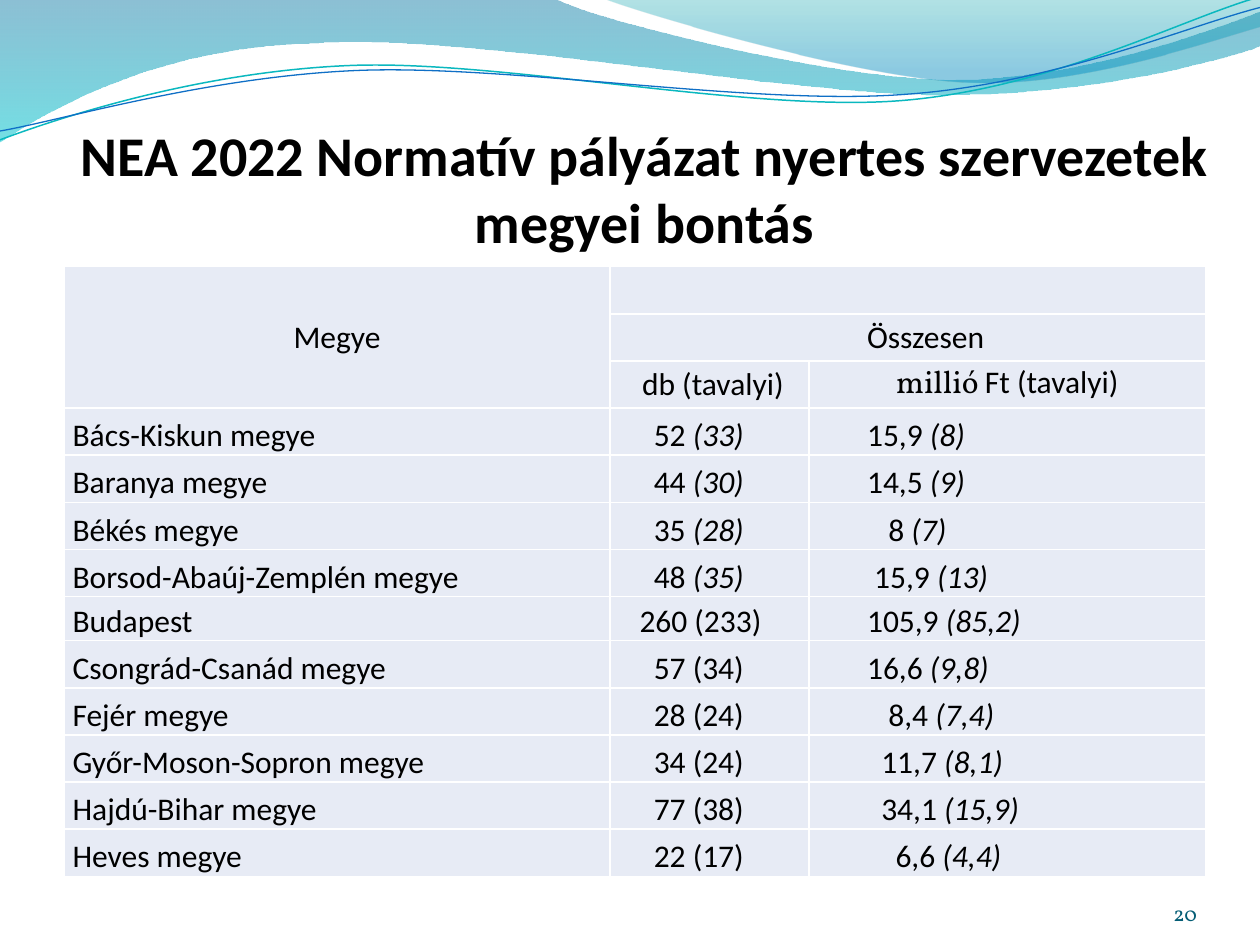
"""Build a slide with a county table of grant winners under a wave banner."""
from dataclasses import dataclass
from math import cos, radians, sin

from lxml.etree import SubElement as Sub
from pptx import Presentation
from pptx.dml.color import RGBColor as Rgb
from pptx.enum.text import MSO_ANCHOR as Anchor, MSO_AUTO_SIZE as Auto, PP_ALIGN as Align
from pptx.oxml.ns import qn
from pptx.util import Pt


@dataclass(frozen=True)
class Theme:
    ink: str = "000000"
    cell: str = "E7EBF5"
    rule: str = "FFFFFF"
    page: str = "045D75"
    sans: str = "Calibri"
    serif: str = "Vollkorn"
    head: int = 32
    body: int = 18
    foot: int = 12
    waves: tuple = (((0, "0074A1", 45), (100, "00C6CF", 55)),
                    ((0, "00A1A9", 30), (80, "008BBF", 45)))
    lines: tuple = (("0AB8BF", 0.85), ("0F6FC6", 0.75))


def draw(path, closed, turn=0, mid=(0, 0)):
    """Draw a path of lines (one point) and curves (three points), turned about mid."""
    wide, rise = cos(radians(turn)), sin(radians(turn))
    dots = []
    for part in path:
        for x, y in zip(part[::2], part[1::2]):
            dx, dy = x - mid[0], y - mid[1]
            dots.append((round((mid[0] + dx * wide + dy * rise) * col),
                         round((mid[1] - dx * rise + dy * wide) * row)))
    pen = shapes.build_freeform(*dots[0], scale=1)
    pen.add_line_segments(dots[1:], close=closed)
    wave = pen.convert_to_shape()
    wave.shadow.inherit = False
    wave.rotation = turn
    nodes = wave.element.spPr.iter(qn("a:lnTo"))
    nodes = iter(list(nodes))
    for part in path[1:]:
        first = next(nodes)
        if len(part) == 6:
            first.tag = qn("a:cubicBezTo")
            for _ in range(2):
                node = next(nodes)
                first.append(node[0])
                node.getparent().remove(node)
    return wave


def write(box, runs, size, align=Align.LEFT, **form):
    """Set the frame's format and write runs of (text, font values)."""
    for key, val in form.items():
        setattr(box, key, val)
    frame = getattr(box, "text_frame", box)
    para = frame.paragraphs[0]
    para.alignment = align
    for text, look in runs:
        run = para.add_run()
        run.text = text
        look = {"name": theme.sans, "size": Pt(size), **look}
        tint = look.pop("tint", theme.ink)
        for key, val in look.items():
            setattr(run.font, key, val)
        run.font.color.rgb = Rgb.from_string(tint)


theme = Theme()
deck = Presentation()
deck.slide_width, deck.slide_height = Pt(720), Pt(540)
col, row = deck.slide_width / 10, deck.slide_height / 7.5
slide = deck.slides.add_slide(deck.slide_layouts[5])
shapes = slide.shapes

bands = [
    [(0, 0), (4.4, -0.01), (4.76, 0.17, 6.64, 0.63, 7.58, 0.63),
     (8.53, 0.63, 9.58, 0.26, 10, 0.09), (10.01, 0.36),
     (9.83, 0.44, 8.7, 0.76, 7.46, 0.75), (6.22, 0.75, 3.82, 0.28, 2.57, 0.34),
     (1.29, 0.36, 0.46, 0.83, -0.01, 1.13), (0, 0)],
    [(4.79, -0.01), (5.09, 0.11, 6.82, 0.62, 7.69, 0.65),
     (8.56, 0.69, 9.61, 0.32, 10, 0.21), (10, 0), (4.79, -0.01)],
]
for path, stops in zip(bands, theme.waves):
    wave = draw(path, True)
    wave.line.fill.background()
    wave.fill.gradient()
    wave.fill.gradient_angle = 270
    for stop, (spot, tint, alpha) in zip(wave.fill.gradient_stops, stops):
        stop.position = spot / 100
        stop.color.rgb = Rgb.from_string(tint)
    tints = wave.element.spPr.iter(qn("a:srgbClr"))
    for node, (spot, tint, alpha) in zip(tints, stops):
        Sub(node, qn("a:alpha"), val=str(alpha * 1000))

strands = [
    ((4.99, 0.58), [(0, 1.11), (0.48, 0.93, 1.58, 0.57, 2.77, 0.52),
                    (3.95, 0.47, 5.93, 0.89, 7.13, 0.8),
                    (8.33, 0.71, 9.38, 0.15, 9.98, -0.02)]),
    ((5, 0.59), [(0, 1.04), (0.47, 0.96, 1.64, 0.61, 2.83, 0.56),
                 (4.03, 0.51, 5.97, 0.84, 7.17, 0.75),
                 (8.36, 0.67, 9.41, 0.21, 10, 0.06)]),
]
for (mid, path), (tint, width) in zip(strands, theme.lines):
    wave = draw(path, False, 357.3, mid)
    wave.fill.background()
    wave.line.color.rgb = Rgb.from_string(tint)
    wave.line.width = Pt(width)

title = shapes.title
place = {"left": 0.5 * col, "top": 0.77 * row, "width": 9.23 * col, "height": 1.25 * row}
for key, val in place.items():
    setattr(title, key, round(val))
shapes.element.append(title.element)
write(title.text_frame, [("NEA 2022 Normatív pályázat nyertes szervezetek megyei bontás",
                          {"bold": True})],
      theme.head, Align.CENTER, word_wrap=True, auto_size=Auto.NONE,
      vertical_anchor=Anchor.BOTTOM, margin_left=0, margin_right=0,
      margin_top=round(0.05 * row), margin_bottom=0)

counties = [
    ("Bács-Kiskun megye", 6, "52 ", "(33)", 8, "15,9 ", "(8)"),
    ("Baranya megye", 6, "44 ", "(30)", 8, "14,5 ", "(9)"),
    ("Békés megye", 6, "35 ", "(28)", 11, "8 ", "(7)"),
    ("Borsod-Abaúj-Zemplén megye", 6, "48 ", "(35)", 9, "15,9 ", "(13)"),
    ("Budapest", 4, "260 (233)", "", 8, "105,9 ", "(85,2)"),
    ("Csongrád-Csanád megye", 6, "57 (34)", "", 8, "16,6 ", "(9,8)"),
    ("Fejér megye", 6, "28 (24)", "", 11, "8,4 ", "(7,4)"),
    ("Győr-Moson-Sopron megye", 6, "34 (24)", "", 10, "11,7 ", "(8,1)"),
    ("Hajdú-Bihar megye", 6, "77 (38)", "", 10, "34,1 ", "(15,9)"),
    ("Heves megye", 6, "22 (17)", "", 12, "6,6 ", "(4,4)"),
]
rows, low, tall = 3 + len(counties), 0.35, 4.84
grid = shapes.add_table(rows, 3, round(0.51 * col), Pt(152.4),
                        round(9.06 * col), round(tall * row)).table
grid.first_row = grid.horz_banding = False
for part, width in zip(grid.columns, (4.33, 1.58, 3.15)):
    part.width = round(width * col)
for part in grid.rows:
    part.height = round((tall - low) / (rows - 1) * row)
grid.rows[7].height = round(low * row)

thin = round(0.01 * row)
for cell in grid.iter_cells():
    props = cell._tc.get_or_add_tcPr()
    for side in "LRTB":
        edge = Sub(props, qn(f"a:ln{side}"), w=str(Pt(1)))
        Sub(Sub(edge, qn("a:solidFill")), qn("a:srgbClr"), val=theme.rule)
    cell.fill.solid()
    cell.fill.fore_color.rgb = Rgb.from_string(theme.cell)
    trim = {"margin_left": thin, "margin_right": thin, "margin_top": thin, "margin_bottom": 0}
    for key, val in trim.items():
        setattr(cell, key, val)
for top, left, end, right in ((0, 0, 2, 0), (0, 1, 0, 2), (1, 1, 1, 2)):
    grid.cell(top, left).merge(grid.cell(end, right))

space = Pt(theme.body * 0.226)
heads = [
    (0, 0, 0, [("Megye", {})]),
    (1, 1, 5, [("Összesen", {})]),
    (2, 1, 1, [("db (tavalyi)", {})]),
    (2, 2, 0, [("millió ", {"name": theme.serif}), ("Ft (tavalyi)", {})]),
]
for r, c, pad, runs in heads:
    write(grid.cell(r, c), runs, theme.body, Align.CENTER,
          vertical_anchor=Anchor.MIDDLE, margin_left=thin + pad * space)
for r, (name, pad, count, last, inset, total, prior) in enumerate(counties, 3):
    texts = (1, name, ""), (pad, count, last), (inset, total, prior)
    for c, (gap, text, tail) in enumerate(texts):
        runs = [(text, {})] + ([(tail, {"italic": True})] if tail else [])
        write(grid.cell(r, c), runs, theme.body,
              vertical_anchor=Anchor.BOTTOM, margin_left=thin + gap * space)

page = shapes.add_textbox(*map(round, (8.67 * col, 6.95 * row, 0.83 * col, 0.4 * row)))
write(page.text_frame, [("20", {"name": theme.serif, "tint": theme.page})],
      theme.foot, Align.RIGHT, word_wrap=True, vertical_anchor=Anchor.BOTTOM,
      margin_left=0, margin_right=0, margin_top=0, margin_bottom=0)

deck.save("out.pptx")
